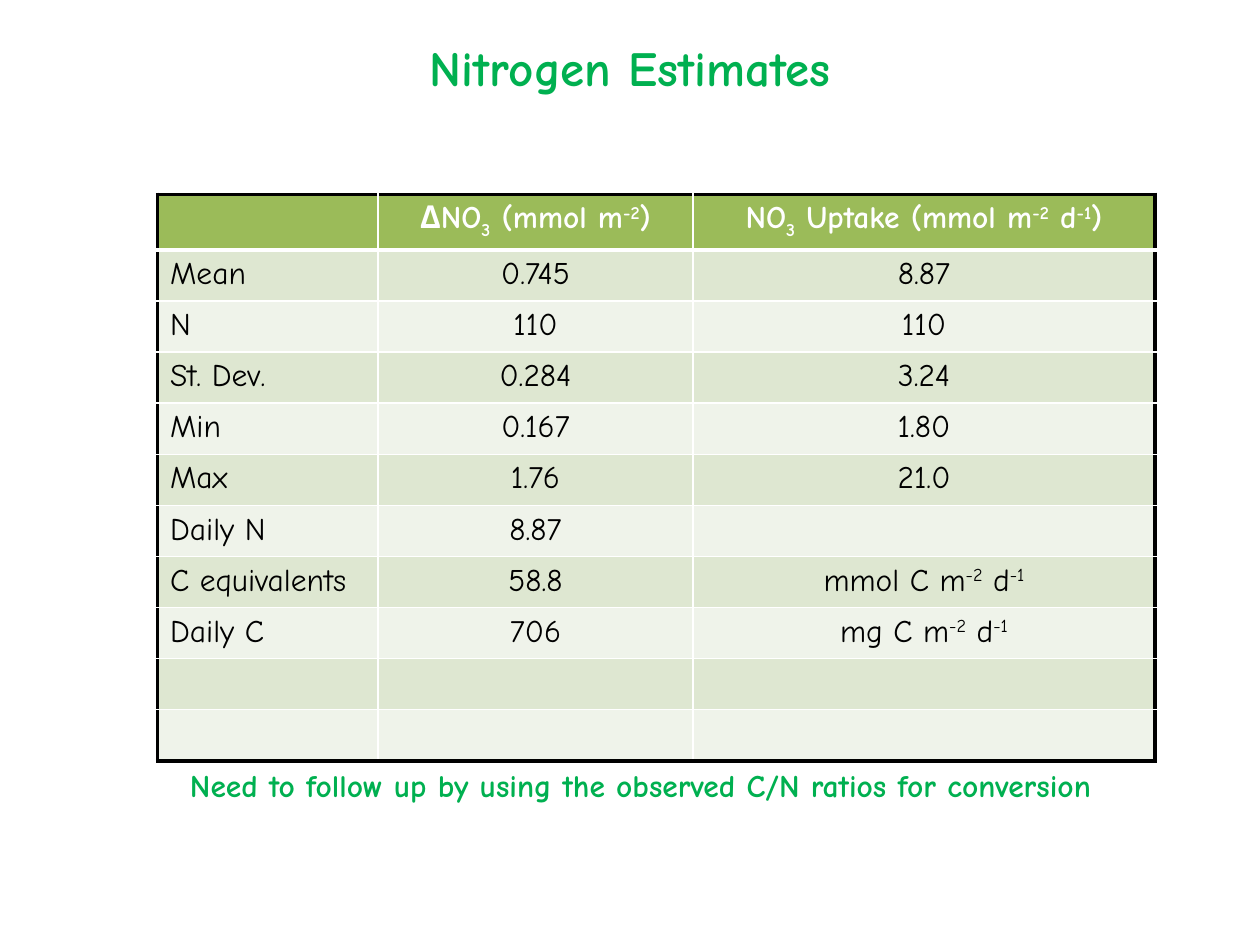
from lxml.etree import SubElement
from pptx import Presentation
from pptx.dml.color import RGBColor
from pptx.enum.text import MSO_ANCHOR as Anchor, MSO_AUTO_SIZE as Fit, PP_ALIGN as Align
from pptx.oxml.ns import qn
from pptx.util import Pt

FONT = "Comic Neue"
GREEN = RGBColor(0x00, 0xB0, 0x50)
HEAD = RGBColor(0x9B, 0xBB, 0x59)
DARK = RGBColor(0xDE, 0xE7, 0xD1)
LIGHT = RGBColor(0xEF, 0xF3, 0xEA)
WHITE = RGBColor(0xFF, 0xFF, 0xFF)
BLACK = RGBColor(0x00, 0x00, 0x00)

BASE = {"_": "-25000", "^": "30000"}
WIDTHS = [126, 180, 264]
ROW = 29.2
DATA = [
    ["", "ΔNO|_3| (mmol m|^-2|)", "NO|_3| Uptake (mmol m|^-2| d|^-1|)"],
    ["Mean", "0.745", "8.87"],
    ["N", "110", "110"],
    ["St. Dev.", "0.284", "3.24"],
    ["Min", "0.167", "1.80"],
    ["Max", "1.76", "21.0"],
    ["Daily N", "8.87", ""],
    ["C equivalents", "58.8", "mmol C m|^-2| d|^-1"],
    ["Daily C", "706", "mg C m|^-2| d|^-1"],
    ["", "", ""],
    ["", "", ""],
]


def style(run, size, color, bold):
    """Set the look of one run."""
    font = run.font
    font.name, font.size, font.bold = FONT, Pt(size), bold
    font.color.rgb = color


def write(par, text, color, bold):
    """Fill a paragraph from parts split by bars, with _ for low and ^ for high."""
    for part in filter(None, text.split("|")):
        run = par.add_run()
        run.text = part.lstrip("_^")
        style(run, 18, color, bold)
        if part[0] in BASE:
            run.font._element.set("baseline", BASE[part[0]])


def edge(cell, side, color, width):
    """Draw one border of a cell."""
    props = cell._tc.get_or_add_tcPr()
    line = SubElement(props, qn(f"a:ln{side}"), w=str(Pt(width)))
    fill = SubElement(line, qn("a:solidFill"))
    SubElement(fill, qn("a:srgbClr"), val=str(color))


def frame(cell, row, col):
    """Draw black outer borders and white inner ones."""
    last = len(DATA) - 1
    outer = {"L": col == 0, "R": col == 2, "T": row == 0, "B": row == last}
    for side, out in outer.items():
        rule = (row, side) in ((0, "B"), (1, "T"))
        color, width = (BLACK, 2.25) if out else (WHITE, 3 if rule else 1)
        edge(cell, side, color, width)


def label(shape, text, size):
    """Put one centred green line in a shape."""
    body = shape.text_frame
    body.text = text
    body.word_wrap = True
    body.auto_size = Fit.SHAPE_TO_FIT_TEXT
    body.vertical_anchor = Anchor.TOP
    par = body.paragraphs[0]
    par.alignment = Align.CENTER
    style(par.runs[0], size, GREEN, True)


def head(slide):
    """Place the slide title."""
    title = slide.shapes.title
    title.left, title.top, title.width, title.height = Pt(144), Pt(18), Pt(432), Pt(41)
    label(title, "Nitrogen Estimates", 28)


def grid(slide):
    """Build the table of estimates."""
    shape = slide.shapes.add_table(
        len(DATA), len(WIDTHS), Pt(90), Pt(111), Pt(sum(WIDTHS)), Pt(ROW * len(DATA))
    )
    table = shape.table
    table.horz_banding = False
    for col, width in zip(table.columns, WIDTHS):
        col.width = Pt(width)
    for r, texts in enumerate(DATA):
        table.rows[r].height = Pt(ROW)
        for c, text in enumerate(texts):
            cell = table.cell(r, c)
            frame(cell, r, c)
            cell.fill.solid()
            cell.fill.fore_color.rgb = HEAD if r == 0 else DARK if r % 2 else LIGHT
            par = cell.text_frame.paragraphs[0]
            par.alignment = Align.CENTER if c else Align.LEFT
            write(par, text, BLACK if r else WHITE, r == 0)


def note(slide):
    """Add the remark under the table."""
    box = slide.shapes.add_textbox(Pt(72), Pt(434), Pt(588), Pt(51))
    label(box, "Need to follow up by using the observed C/N ratios for conversion", 18)


def main():
    """Build and save the slide."""
    deck = Presentation()
    deck.slide_width, deck.slide_height = Pt(720), Pt(540)
    slide = deck.slides.add_slide(deck.slide_layouts[5])
    head(slide)
    grid(slide)
    note(slide)
    deck.save("out.pptx")


if __name__ == "__main__":
    main()
